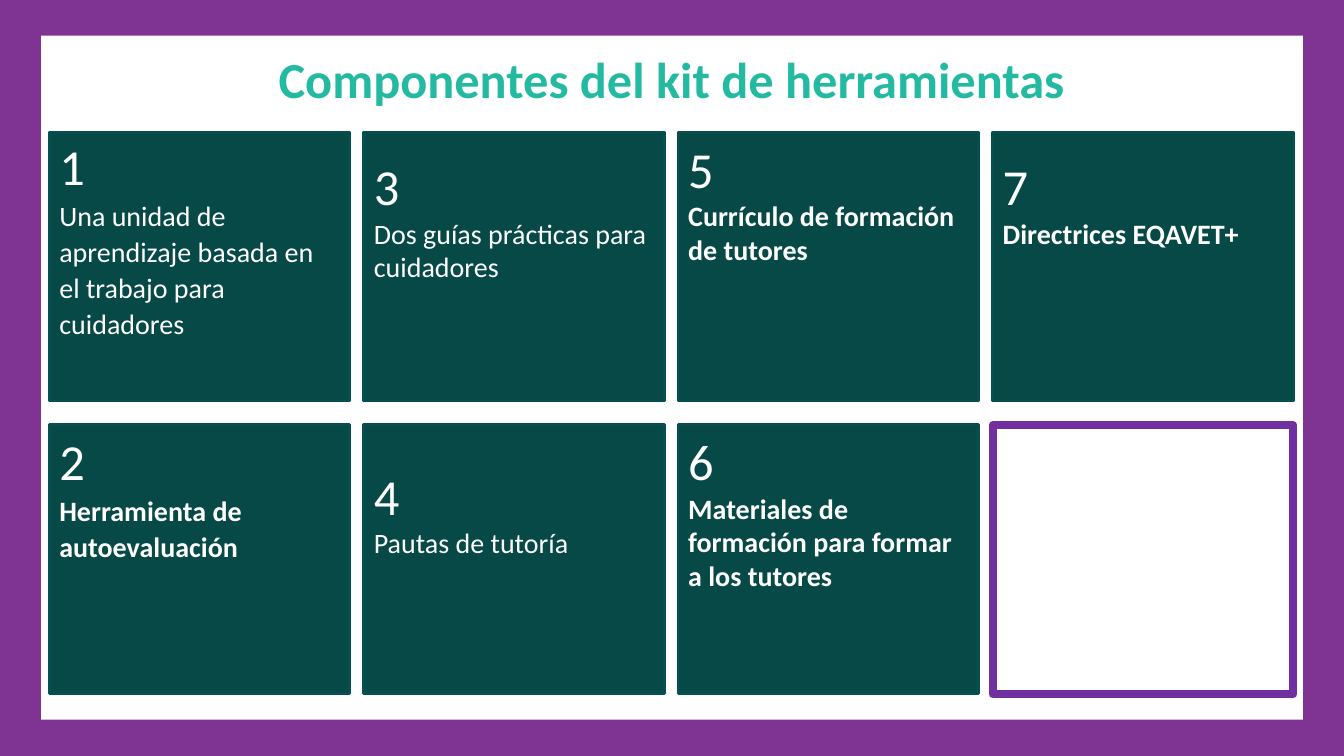
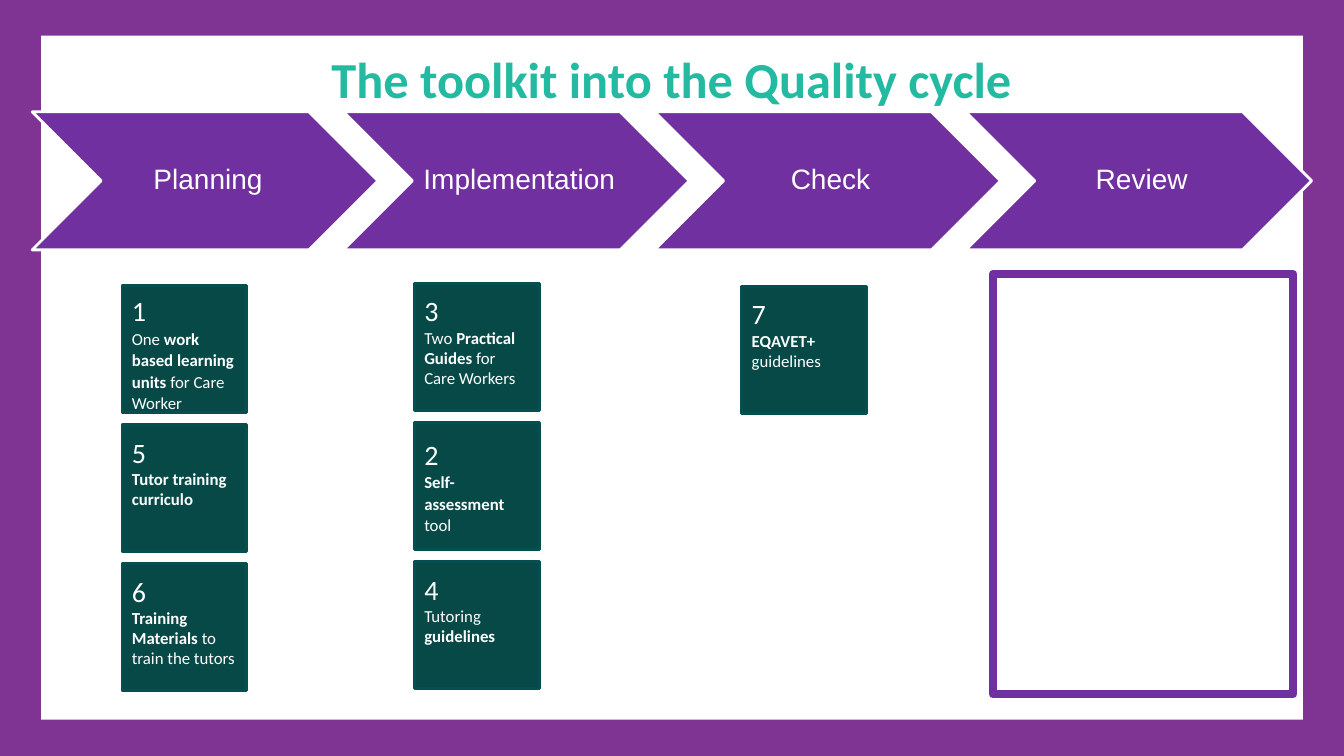
import pptx
import pptx.util
import pptx.dml.color
import pptx.enum.shapes
import pptx.enum.text

Pt = pptx.util.Pt
Color = pptx.dml.color.RGBColor
Shape = pptx.enum.shapes.MSO_SHAPE
Align = pptx.enum.text.PP_ALIGN
Anchor = pptx.enum.text.MSO_ANCHOR

BORDER = Color(0x7F, 0x34, 0x94)
PURPLE = Color(0x70, 0x30, 0xA0)
WHITE = Color(0xFF, 0xFF, 0xFF)
TITLE = Color(0x24, 0xBA, 0xA2)
CARD_FILL = Color(0x06, 0x49, 0x47)
CARD_LINE = Color(0x05, 0x4F, 0x50)

# Each card: number, text runs (text, bold), space above the number, line spacing
COMPONENTS_TITLE = "Componentes del kit de herramientas"
COMPONENT_COLUMNS = [
    [("1", [("Una unidad de aprendizaje basada en el trabajo para cuidadores", False)], 2.5, 1.07),
     ("2", [("Herramienta de autoevaluación", True)], 4.6, 1.07)],
    [("3", [("Dos guías prácticas para cuidadores", False)], 16.8, 1),
     ("4", [("Pautas de tutoría", False)], 29, 1)],
    [("5", [("Currículo de formación de tutores", True)], 4.6, 1),
     ("6", [("Materiales de formación para formar a los tutores", True)], 4.6, 1)],
    [("7", [("Directrices EQAVET+", True)], 16.8, 1)],
]

CYCLE_TITLE = "The toolkit into the Quality cycle"
PHASES = ["Planning", "Implementation", "Check", "Review"]
# Each column: left, top, cards
CYCLE_COLUMNS = [
    (87.1, 203.9, [
        ("1", [("One ", False), ("work based learning units ", True),
               ("for Care Worker", False)], 5.6, 1.07),
        ("5", [("Tutor training curriculo", True)], 7.5, 1),
        ("6", [("Training Materials ", True), ("to train the tutors", False)], 7.5, 1)]),
    (296, 202.3, [
        ("3", [("Two ", False), ("Practical Guides ", True),
               ("for Care Workers", False)], 7.5, 1),
        ("2", [("Self-assessment ", True), ("tool", False)], 10.5, 1.07),
        ("4", [("Tutoring ", False), ("guidelines", True)], 7.5, 1)]),
    (529.9, 204.5, [
        ("7", [("EQAVET+ ", True), ("guidelines", False)], 7.5, 1)]),
]

# Component grid
GRID_LEFT, GRID_TOP, COLUMN_STEP, ROW_STEP = 35.3, 94.3, 224.6, 208.7
CARD_WIDTH, CARD_HEIGHT = 214.6, 192.2
FRAME_LEFT, FRAME_BOTTOM = 709.2, 496
# Cycle slide
SMALL_WIDTH, SMALL_HEIGHT, SMALL_STEP = 89.3, 90.7, 99.4
CHEVRON_LEFT, CHEVRON_TOP, CHEVRON_STEP = 23, 79.9, 222.3
CHEVRON_WIDTH, CHEVRON_HEIGHT = 247, 98.6


def add_box(slide, kind, left, top, width, height, fill=None, line=None, weight=2):
    box = slide.shapes.add_shape(kind, Pt(left), Pt(top), Pt(width), Pt(height))
    box.shadow.inherit = False
    if fill is None:
        box.fill.background()
    else:
        box.fill.solid()
        box.fill.fore_color.rgb = fill
    if line is None:
        box.line.fill.background()
    else:
        box.line.color.rgb = line
        box.line.width = Pt(weight)
    return box


def set_frame(box, margins=(7.2, 3.6, 7.2, 3.6), anchor=Anchor.TOP, wrap=True):
    frame = box.text_frame
    frame.word_wrap = wrap
    frame.vertical_anchor = anchor
    (frame.margin_left, frame.margin_top,
     frame.margin_right, frame.margin_bottom) = [Pt(m) for m in margins]
    return frame


def write(para, text, size=20, color=WHITE, font="Calibri", bold=False,
          align=Align.LEFT, spacing=1):
    para.alignment = align
    para.line_spacing = spacing
    span = para.add_run()
    span.text = text
    span.font.size = Pt(size)
    span.font.name = font
    span.font.bold = bold
    span.font.color.rgb = color


def add_card(slide, left, top, width, height, card, number_size, text_size):
    number, runs, space_above, spacing = card
    box = add_box(slide, Shape.RECTANGLE, left, top, width, height, CARD_FILL, CARD_LINE)
    frame = set_frame(box, (7.2, space_above, 7.2, 0))
    write(frame.paragraphs[0], number, size=number_size)
    para = frame.add_paragraph()
    for text, bold in runs:
        write(para, text, size=text_size, bold=bold, spacing=spacing)


def add_empty_frame(slide, top):
    add_box(slide, Shape.RECTANGLE, FRAME_LEFT, top, CARD_WIDTH, FRAME_BOTTOM - top,
            line=PURPLE, weight=6)


def add_page(deck, title):
    slide = deck.slides.add_slide(deck.slide_layouts[6])
    add_box(slide, Shape.RECTANGLE, 29.3, 25.4, 901.4, 488.7, fill=WHITE)
    box = slide.shapes.add_textbox(Pt(62.6), Pt(31), Pt(834.5), Pt(63.4))
    write(set_frame(box).paragraphs[0], title, size=36, color=TITLE, bold=True,
          align=Align.CENTER)
    return slide


def build_components(deck):
    slide = add_page(deck, COMPONENTS_TITLE)
    for column, cards in enumerate(COMPONENT_COLUMNS):
        for row, card in enumerate(cards):
            add_card(slide, GRID_LEFT + column * COLUMN_STEP, GRID_TOP + row * ROW_STEP,
                     CARD_WIDTH, CARD_HEIGHT, card, 36, 20)
    add_empty_frame(slide, FRAME_BOTTOM - CARD_HEIGHT)


def build_cycle(deck):
    slide = add_page(deck, CYCLE_TITLE)
    for left, top, cards in CYCLE_COLUMNS:
        for row, card in enumerate(cards):
            add_card(slide, left, top + row * SMALL_STEP,
                     SMALL_WIDTH, SMALL_HEIGHT, card, 20, 12)
    add_empty_frame(slide, 195.8)
    # Phase arrows
    for index, phase in enumerate(PHASES):
        chevron = add_box(slide, Shape.CHEVRON, CHEVRON_LEFT + index * CHEVRON_STEP,
                          CHEVRON_TOP, CHEVRON_WIDTH, CHEVRON_HEIGHT, PURPLE, WHITE)
        frame = set_frame(chevron, (6.5, 2.2, 2.2, 2.2), Anchor.MIDDLE, wrap=False)
        write(frame.paragraphs[0], phase, font="Arial", align=Align.CENTER, spacing=0.9)


def main():
    deck = pptx.Presentation()
    deck.slide_width, deck.slide_height = Pt(960), Pt(540)
    # Purple border behind every slide
    background = deck.slide_master.background.fill
    background.solid()
    background.fore_color.rgb = BORDER
    build_components(deck)
    build_cycle(deck)
    deck.save("out.pptx")


if __name__ == "__main__":
    main()
